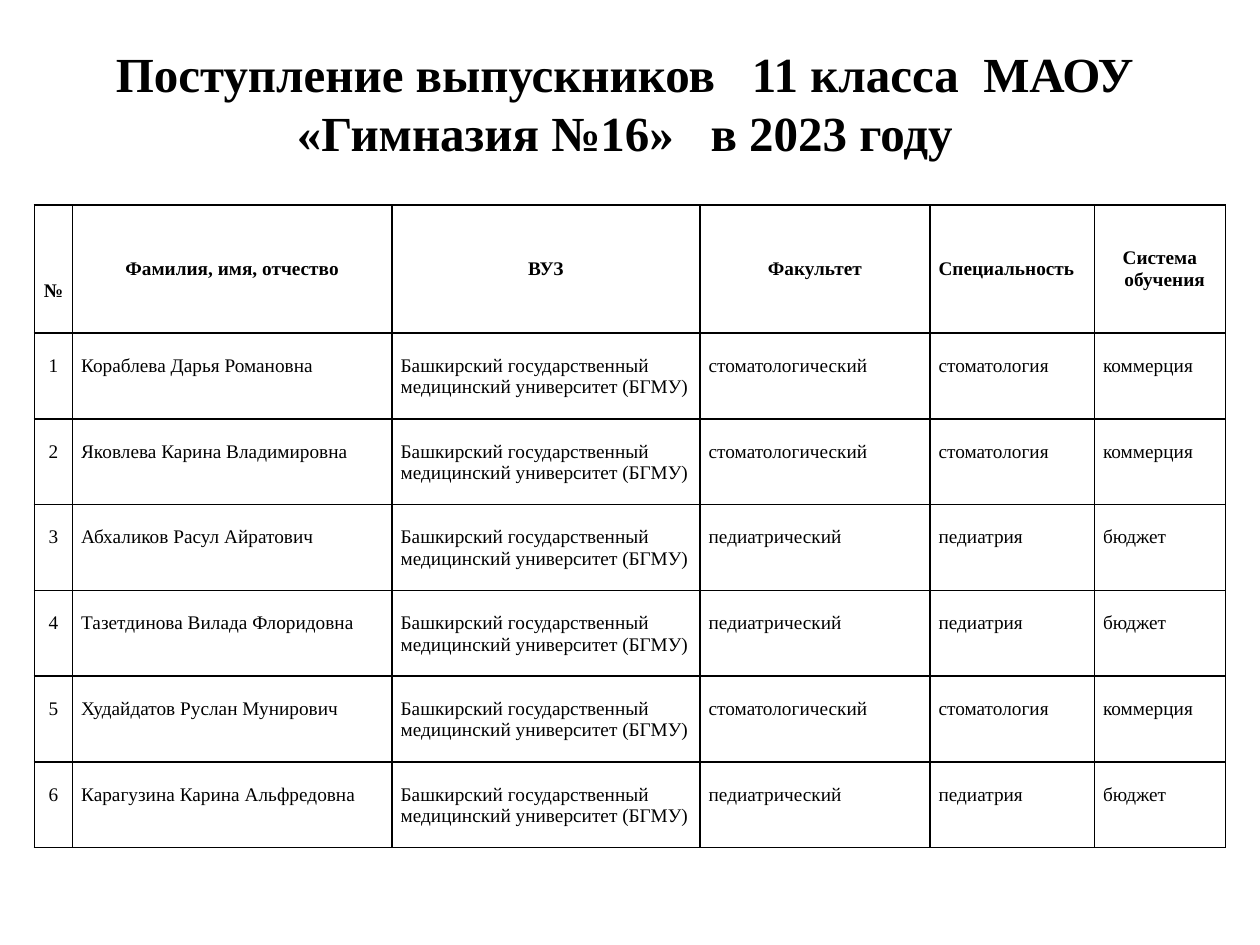
from lxml.etree import SubElement as Sub
from pptx import Presentation
from pptx.dml.color import RGBColor
from pptx.enum.text import MSO_ANCHOR as Anchor, MSO_AUTO_SIZE as Fit, PP_ALIGN as Align
from pptx.oxml.ns import qn
from pptx.util import Pt

BLACK = RGBColor(0, 0, 0)
FONT = "Times New Roman"
LINE = 12.65  # height of one 11 pt text line

TITLE = "Поступление выпускников   11 класса  МАОУ «Гимназия №16»   в 2023 году"
HEADS = ["№", "Фамилия, имя, отчество", "ВУЗ", "Факультет", "Специальность",
         "Система\nобучения"]
WIDTHS = [21.7, 182.6, 176, 131.4, 94, 74.9]
HEAD_H, ROW_H = 73.4, 49

SCHOOL = "Башкирский государственный медицинский университет (БГМУ)"
DENTAL = ["стоматологический", "стоматология", "коммерция"]
CHILD = ["педиатрический", "педиатрия", "бюджет"]
PUPILS = [
    ("Кораблева Дарья Романовна", DENTAL),
    ("Яковлева Карина Владимировна", DENTAL),
    ("Абхаликов Расул Айратович", CHILD),
    ("Тазетдинова Вилада Флоридовна", CHILD),
    ("Худайдатов Руслан Мунирович", DENTAL),
    ("Карагузина Карина Альфредовна", CHILD),
]


class Deck:
    def __init__(self, wide, high):
        self.prs = Presentation()
        self.prs.slide_width, self.prs.slide_height = Pt(wide), Pt(high)
        self.slide = self.prs.slides.add_slide(self.prs.slide_layouts[5])

    def text(self, frame, text, size, bold, align):
        for i, line in enumerate(text.split("\n")):
            para = frame.add_paragraph() if i else frame.paragraphs[0]
            para.alignment = align
            run = para.add_run()
            run.text = line
            font = run.font
            font.name, font.size, font.bold = FONT, Pt(size), bold
            font.color.rgb = BLACK

    def title(self, text, left, top, wide, high):
        box = self.slide.shapes.title
        box.left, box.top, box.width, box.height = map(Pt, (left, top, wide, high))
        frame = box.text_frame
        frame.word_wrap, frame.auto_size = True, Fit.NONE
        frame.vertical_anchor = Anchor.MIDDLE
        self.text(frame, text, 28, True, Align.CENTER)

    def table(self, left, top, widths, heights):
        grid = self.slide.shapes.add_table(
            len(heights), len(widths), Pt(left), Pt(top),
            Pt(sum(widths)), Pt(sum(heights))).table
        grid.first_row = grid.horz_banding = False
        for col, wide in zip(grid.columns, widths):
            col.width = Pt(wide)
        for row, high in zip(grid.rows, heights):
            row.height = Pt(high)
        return grid

    def cell(self, cell, text, align, bold=False, anchor=Anchor.TOP, drop=0):
        cell.margin_left = cell.margin_right = Pt(5)
        cell.margin_top, cell.margin_bottom = Pt(drop), 0
        cell.vertical_anchor = anchor
        self.border(cell)
        cell.fill.background()
        self.text(cell.text_frame, text, 11, bold, align)

    def border(self, cell):
        props = cell._tc.get_or_add_tcPr()
        for side in ("lnL", "lnR", "lnT", "lnB"):
            line = Sub(props, qn(f"a:{side}"), w=str(Pt(1)))
            fill = Sub(line, qn("a:solidFill"))
            Sub(fill, qn("a:srgbClr"), val=str(BLACK))

    def indent(self, para, left):
        para._p.get_or_add_pPr().set("marL", str(Pt(left)))

    def save(self):
        self.prs.save("out.pptx")


def main():
    deck = Deck(720, 540)
    deck.title(TITLE, 33, 25, 648, 67)
    grid = deck.table(19.7, 117, WIDTHS, [HEAD_H] + [ROW_H] * len(PUPILS))

    # Header row: the number sign sits two lines lower than the rest
    for i, head in enumerate(HEADS):
        align = Align.LEFT if head == "Специальность" else Align.CENTER
        deck.cell(grid.cell(0, i), head, align, True, Anchor.MIDDLE,
                  0 if i else 2 * LINE)
    deck.indent(grid.cell(0, 5).text_frame.paragraphs[1], 5.5)

    # One row per pupil, text one line below the cell top
    aligns = [Align.CENTER] + [Align.LEFT] * 4 + [Align.JUSTIFY]
    for num, (name, study) in enumerate(PUPILS, 1):
        texts = [str(num), name, SCHOOL] + study
        for i, (text, align) in enumerate(zip(texts, aligns)):
            deck.cell(grid.cell(num, i), text, align, drop=LINE)
    deck.save()


if __name__ == "__main__":
    main()
